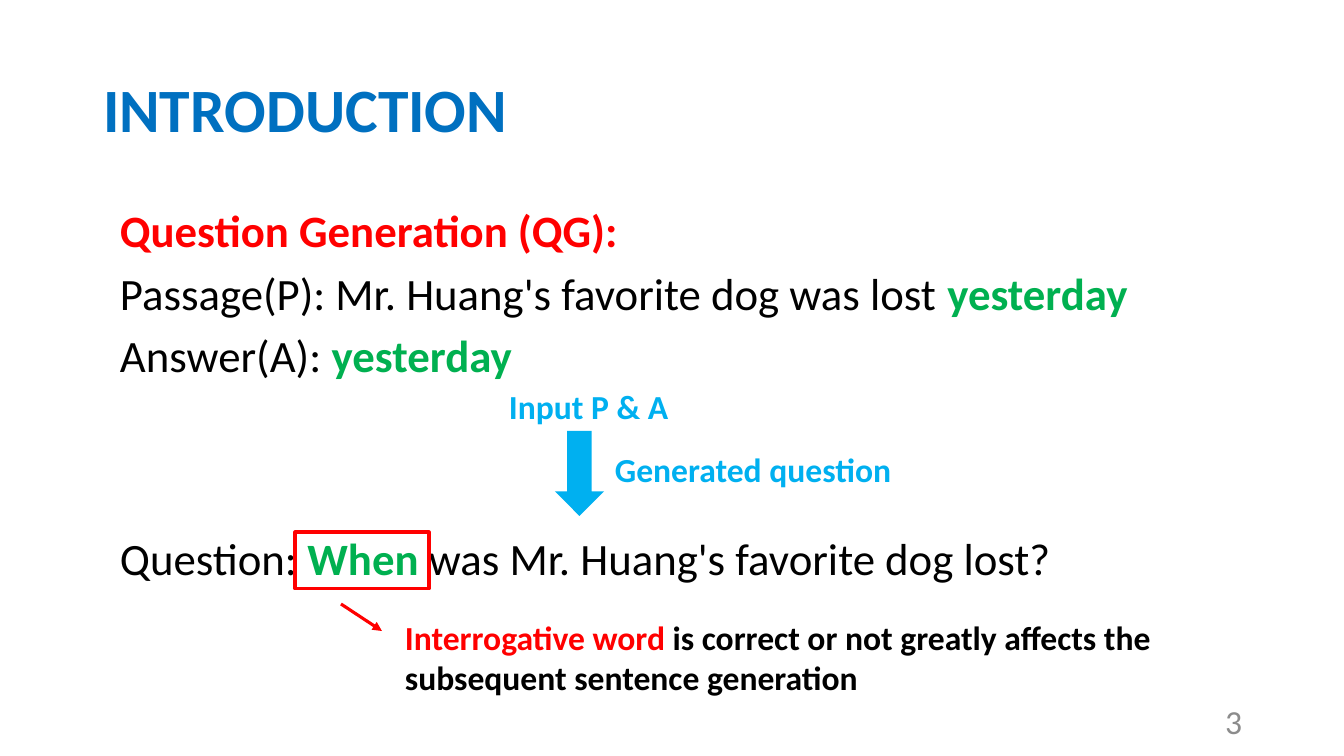
from lxml.etree import SubElement
from pptx import Presentation
from pptx.dml.color import RGBColor
from pptx.enum.shapes import MSO_CONNECTOR as Connector, MSO_SHAPE as Shape
from pptx.enum.text import MSO_ANCHOR as Anchor, MSO_AUTO_SIZE as AutoSize, PP_ALIGN as Align
from pptx.oxml.ns import qn
from pptx.util import Emu, Pt

EMU_PER_PX = 914400 / 100.8
FONT = "Calibri"
BLACK = RGBColor(0x00, 0x00, 0x00)
BLUE = RGBColor(0x00, 0x70, 0xC0)
GRAY = RGBColor(0x8C, 0x8C, 0x8C)
GREEN = RGBColor(0x00, 0xB0, 0x50)
RED = RGBColor(0xFF, 0x00, 0x00)
SKY = RGBColor(0x00, 0xB0, 0xF0)


def px(length):
    return Emu(round(length * EMU_PER_PX))


def add_runs(paragraph, runs, size):
    for text, color, bold in runs:
        run = paragraph.add_run()
        run.text = text
        run.font.name = FONT
        run.font.size = Pt(size)
        run.font.bold = bold
        run.font.color.rgb = color


def add_title(slide, text, left, top, width, height):
    title = slide.shapes.title
    title.left, title.top, title.width, title.height = map(px, (left, top, width, height))
    frame = title.text_frame
    frame.auto_size = AutoSize.NONE
    frame.vertical_anchor = Anchor.MIDDLE
    paragraph = frame.paragraphs[0]
    paragraph.alignment = Align.LEFT
    paragraph.line_spacing = 0.9
    add_runs(paragraph, [(text, BLUE, True)], 44)


def add_text(slide, box, lines, size, align=Align.LEFT, anchor=Anchor.TOP,
             line_spacing=1.0, space_before=0):
    frame = slide.shapes.add_textbox(*map(px, box)).text_frame
    frame.word_wrap = True
    frame.vertical_anchor = anchor
    for index, runs in enumerate(lines):
        paragraph = frame.add_paragraph() if index else frame.paragraphs[0]
        paragraph.alignment = align
        paragraph.line_spacing = line_spacing
        paragraph.space_before = Pt(space_before)
        add_runs(paragraph, runs, size)


def add_down_arrow(slide, box):
    shape = slide.shapes.add_shape(Shape.DOWN_ARROW, *map(px, box))
    shape.shadow.inherit = False
    shape.fill.solid()
    shape.fill.fore_color.rgb = SKY
    shape.line.fill.background()


def add_frame(slide, box):
    shape = slide.shapes.add_shape(Shape.RECTANGLE, *map(px, box))
    shape.shadow.inherit = False
    shape.fill.background()
    shape.line.color.rgb = RED
    shape.line.width = Pt(2.25)


def add_pointer(slide, *ends):
    connector = slide.shapes.add_connector(Connector.STRAIGHT, *map(px, ends))
    connector.line.color.rgb = RED
    connector.line.width = Pt(2.25)
    SubElement(connector.line._get_or_add_ln(), qn("a:tailEnd"), type="triangle")
    SubElement(connector._element.spPr, qn("a:effectLst"))


def main():
    presentation = Presentation()
    presentation.slide_width, presentation.slide_height = px(1344), px(756)
    slide = presentation.slides.add_slide(presentation.slide_layouts[5])

    add_title(slide, "INTRODUCTION", 93, 40, 1159, 146)
    add_text(slide, (110, 204, 1177, 212), [
        [("Question Generation (QG):", RED, True)],
        [("Passage(P): Mr. Huang's favorite dog was lost ", BLACK, False),
         ("yesterday", GREEN, True)],
        [("Answer(A): ", BLACK, False), ("yesterday", GREEN, True)],
    ], 32, line_spacing=0.9, space_before=10)
    add_text(slide, (950, 701, 302, 40), [[("3", GRAY, False)]], 24,
             align=Align.RIGHT, anchor=Anchor.MIDDLE)

    add_down_arrow(slide, (555, 431, 49, 85))
    add_text(slide, (605, 444, 350, 50), [[("Generated question", SKY, True)]], 24)
    add_text(slide, (110, 532, 1177, 85), [
        [("Question: ", BLACK, False), ("When", GREEN, True),
         (" was Mr. Huang's favorite dog lost?", BLACK, False)],
    ], 32, line_spacing=0.9, space_before=12)
    add_frame(slide, (295, 532, 134, 57))
    add_pointer(slide, 341, 604, 382, 631)
    add_text(slide, (395, 612, 815, 92), [
        [("Interrogative word", RED, True),
         (" is correct or not greatly affects the subsequent sentence generation",
          BLACK, True)],
    ], 24)
    add_text(slide, (499, 381, 303, 50), [[("Input P & A", SKY, True)]], 24)

    presentation.save("out.pptx")


if __name__ == "__main__":
    main()
